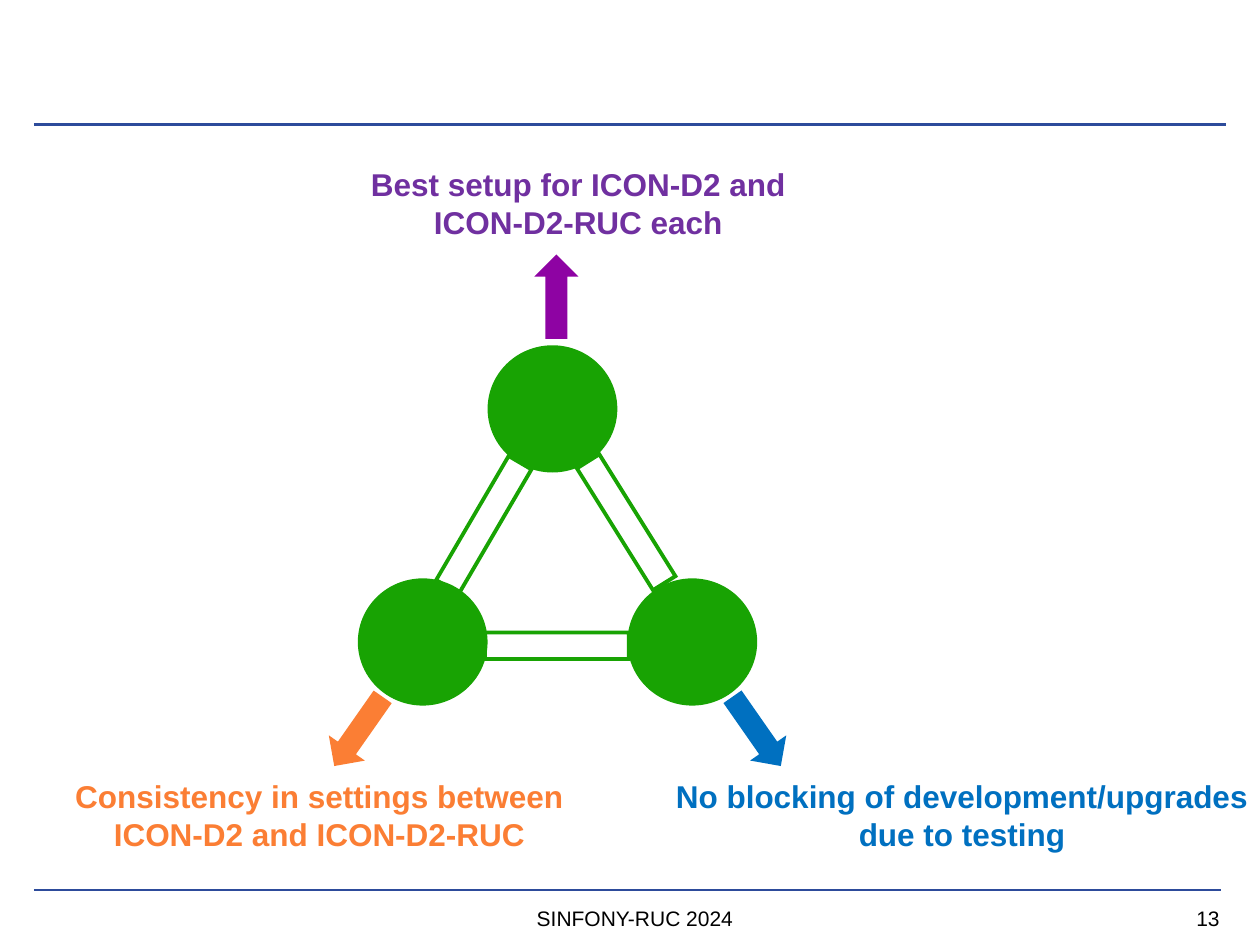
from lxml import etree
from pptx import Presentation
from pptx.dml.color import RGBColor
from pptx.enum.shapes import MSO_CONNECTOR, MSO_SHAPE
from pptx.enum.text import MSO_ANCHOR, MSO_AUTO_SIZE, PP_ALIGN
from pptx.oxml.ns import qn
from pptx.util import Inches, Pt

LINE = MSO_CONNECTOR.STRAIGHT
DISK, BAR, ARROW = MSO_SHAPE.OVAL, MSO_SHAPE.FRAME, MSO_SHAPE.UP_ARROW
TOP, MIDDLE = MSO_ANCHOR.TOP, MSO_ANCHOR.MIDDLE
GROW, FIXED = MSO_AUTO_SIZE.SHAPE_TO_FIT_TEXT, MSO_AUTO_SIZE.NONE
CENTER, RIGHT = PP_ALIGN.CENTER, PP_ALIGN.RIGHT

WIDE, HIGH = Inches(10), Inches(7.5)
COLS, ROWS = 100, 75
BLUE, GREEN, BLACK = "2D4B9B", "18A303", "000000"
LABEL = {"size": Pt(18), "name": "Arial", "bold": True}
SMALL = {"size": Pt(12), "name": "Arial", "bold": False}


def paint(form, color):
    form.rgb = RGBColor.from_string(color)


def spot(box):
    x, y, w, h = box
    col, row = WIDE / COLS, HIGH / ROWS
    return [round(v) for v in (x * col, y * row, w * col, h * row)]


def rule(slide, box, weight):
    x, y, w, h = spot(box)
    line = slide.shapes.add_connector(LINE, x, y, x + w, y + h)
    line.line.width = Pt(weight)
    paint(line.line.color, BLUE)
    etree.SubElement(line._element.spPr, qn("a:effectLst"))


def solid(slide, kind, box, color, turn=0):
    shape = slide.shapes.add_shape(kind, *spot(box))
    shape.shadow.inherit = False
    shape.rotation = turn
    shape.fill.solid()
    paint(shape.fill.fore_color, color)
    shape.line.fill.background()


def write(slide, box, text, color, font, frame, align=CENTER):
    body = slide.shapes.add_textbox(*spot(box)).text_frame
    body.text = text
    for key, value in frame.items():
        setattr(body, key, value)
    for para in body.paragraphs:
        para.alignment = align
        for run in para.runs:
            for key, value in font.items():
                setattr(run.font, key, value)
            paint(run.font.color, color)


def header(slide, box):
    x, y, w, h = box
    rule(slide, (x, y + h, w, 0), 2)


def footer(slide, box):
    x, y, w, h = box
    rule(slide, (x, y, w, 0), 1.13)
    frame = {"word_wrap": True, "auto_size": FIXED, "vertical_anchor": MIDDLE}
    write(slide, (x + 15.4, y + 1.1, 64.6, h - 1.1), "SINFONY-RUC 2024", BLACK, SMALL, frame)
    frame |= dict.fromkeys(
        ("margin_left", "margin_right", "margin_top", "margin_bottom"), 0)
    write(slide, (x + w - 9.5, y + 1.1, 9.4, h - 1.1), "13", BLACK, SMALL, frame, RIGHT)


def triad(slide, box):
    x, y, w, h = box
    aw, ah = 3.5, 6.7
    parts = [
        (DISK, 10.3, 10.1, [(12, 7.2, 0, GREEN), (23.1, 25.7, 0, GREEN),
                            (1.7, 25.7, 0, GREEN)]),
        (BAR, 2.4, 11.7, [(10.5, 15.6, 30.3, GREEN), (16.3, 25.2, 270, GREEN),
                          (21.8, 15.4, 328, GREEN)]),
        (ARROW, aw, ah, [(15.7, 0, 0, "8E03A3"), (w - aw, h - ah, 145.1, "0070C0"),
                         (0, h - ah, 215, "FB7E34")]),
    ]
    for kind, pw, ph, spots in parts:
        for dx, dy, turn, color in spots:
            solid(slide, kind, (x + dx, y + dy, pw, ph), color, turn)


def goals(slide, box):
    x, y, w, h = box
    high = 7.1
    base = y + h - high
    notes = [
        (x, base, 41.1, "FB7E34", False,
         "Consistency in settings between\vICON-D2 and ICON-D2-RUC"),
        (x + w - 47.9, base, 47.9, "0070C0", False,
         "No blocking of development/upgrades\ndue to testing"),
        (x + 23.6, y, 35, "7030A0", True,
         "Best setup for ICON-D2 and ICON-D2-RUC each"),
    ]
    for left, top, wide, color, wrap, text in notes:
        frame = {"word_wrap": wrap, "auto_size": GROW, "vertical_anchor": TOP}
        write(slide, (left, top, wide, high), text, color, LABEL, frame)


def main():
    deck = Presentation()
    deck.slide_width, deck.slide_height = WIDE, HIGH
    slide = deck.slides.add_slide(deck.slide_layouts[6])
    header(slide, (2.7, 0, 94.6, 9.9))
    footer(slide, (2.7, 70.6, 94.2, 3.5))
    triad(slide, (26.7, 20.2, 35.1, 41.2))
    goals(slide, (4.8, 12.6, 95.5, 55.7))
    deck.save("out.pptx")


if __name__ == "__main__":
    main()
